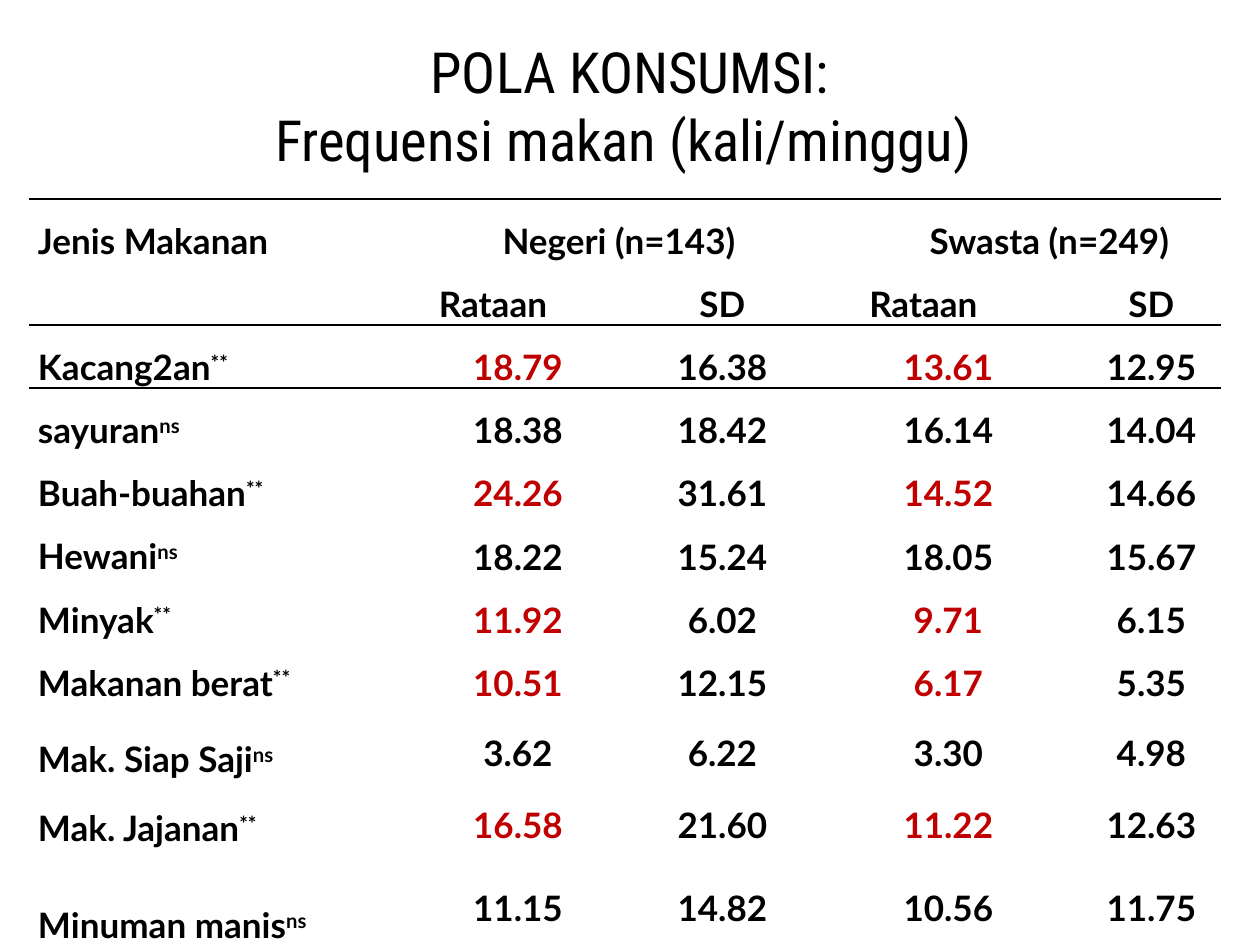
import pptx
import pptx.dml.color
import pptx.enum.text
import pptx.oxml
import pptx.oxml.ns
import pptx.util

PX = 914400 // 126
BLACK, RED, WHITE = "000000", "C00000", "FFFFFF"
ALIGN = pptx.enum.text.PP_ALIGN
ANCHOR = pptx.enum.text.MSO_ANCHOR
NO_STYLE = "{2D5ABB26-0587-4C30-8999-92F81FD0307C}"

COLUMN_WIDTHS = [354, 207, 202, 23, 204, 202]
ROW_HEIGHTS = [52] * 8 + [77, 69, 97]
SCHOOLS = [("Negeri (n=143)", 1), ("Swasta (n=249)", 4)]
VALUE_COLUMNS = [1, 2, 4, 5]

# Food, significance mark, then mean and SD for each school type
FOODS = [
    ("Kacang2an", "**", "18.79", "16.38", "13.61", "12.95"),
    ("sayuran", "ns", "18.38", "18.42", "16.14", "14.04"),
    ("Buah-buahan", "**", "24.26", "31.61", "14.52", "14.66"),
    ("Hewani", "ns", "18.22", "15.24", "18.05", "15.67"),
    ("Minyak", "**", "11.92", "6.02", "9.71", "6.15"),
    ("Makanan berat", "**", "10.51", "12.15", "6.17", "5.35"),
    ("Mak. Siap Saji", "ns", "3.62", "6.22", "3.30", "4.98"),
    ("Mak. Jajanan", "**", "16.58", "21.60", "11.22", "12.63"),
    ("Minuman manis", "ns", "11.15", "14.82", "10.56", "11.75"),
]


def px(length):
    return pptx.util.Emu(length * PX)


def color(value):
    return pptx.dml.color.RGBColor.from_string(value)


def set_attributes(target, values):
    for name, value in values.items():
        setattr(target, name, value)


def add_run(paragraph, text, ink=BLACK, superscript=False):
    run = paragraph.add_run()
    run.text = text
    set_attributes(run.font, {"name": "Lato", "size": pptx.util.Pt(20), "bold": True})
    run.font.color.rgb = color(ink)
    if superscript:
        run._r.get_or_add_rPr().set("baseline", "30000")


def write_cell(cell, text, ink=BLACK, indent=63, mark=None):
    """Write a centred, indented entry, or a left label when indent is 0."""
    paragraph = cell.text_frame.paragraphs[0]
    paragraph.line_spacing = 1.5
    if indent:
        paragraph.alignment = ALIGN.CENTER
        properties = paragraph._p.get_or_add_pPr()
        properties.set("marL", "0")
        properties.set("indent", str(px(indent)))
    add_run(paragraph, text, ink)
    if mark:
        cell.vertical_anchor = ANCHOR.BOTTOM
        add_run(paragraph, mark, superscript=True)


def add_border(cell, side):
    line = pptx.oxml.parse_xml(
        f'<a:{side} {pptx.oxml.ns.nsdecls("a")} w="12700"><a:solidFill>'
        f'<a:srgbClr val="{BLACK}"/></a:solidFill></a:{side}>')
    cell._tc.get_or_add_tcPr().insert(0, line)


def add_title(slide):
    box = slide.shapes.add_textbox(px(0), px(29), px(1260), px(152))
    set_attributes(box.text_frame, {"word_wrap": True, "vertical_anchor": ANCHOR.MIDDLE})
    paragraph = box.text_frame.paragraphs[0]
    paragraph.text = "POLA KONSUMSI:\vFrequensi makan (kali/minggu) "
    paragraph.alignment = ALIGN.CENTER
    for run in paragraph.runs:
        set_attributes(run.font, {"name": "Roboto Condensed", "size": pptx.util.Pt(32.4)})
        run.font.color.rgb = color(BLACK)


def add_empty_table(slide):
    frame = slide.shapes.add_table(
        len(ROW_HEIGHTS), len(COLUMN_WIDTHS), px(29), px(199),
        px(sum(COLUMN_WIDTHS)), px(sum(ROW_HEIGHTS)))
    table = frame.table
    set_attributes(table, {"first_row": False, "horz_banding": False})
    table._tbl.tblPr.find(pptx.oxml.ns.qn("a:tableStyleId")).text = NO_STYLE
    for column, width in zip(table.columns, COLUMN_WIDTHS):
        column.width = px(width)
    for row, height in zip(table.rows, ROW_HEIGHTS):
        row.height = px(height)

    # Plain white cells, ruled above and below the header and at the foot
    rules = {0: "lnT", 1: "lnB", 2: "lnT", len(ROW_HEIGHTS) - 1: "lnB"}
    for row_index, row in enumerate(table.rows):
        for cell in row.cells:
            set_attributes(cell, {
                "margin_left": px(9), "margin_right": px(9), "margin_top": 0,
                "margin_bottom": 0, "vertical_anchor": ANCHOR.MIDDLE})
            cell.fill.solid()
            cell.fill.fore_color.rgb = color(WHITE)
            if row_index in rules:
                add_border(cell, rules[row_index])
    return table


def fill_header(table):
    write_cell(table.cell(0, 0), "Jenis Makanan", indent=0)
    for school, column in SCHOOLS:
        table.cell(0, column).merge(table.cell(0, column + 1))
        write_cell(table.cell(0, column), school)
        write_cell(table.cell(1, column), "Rataan", indent=13)
        write_cell(table.cell(1, column + 1), "SD")


def fill_foods(table):
    mean_columns = [column for _, column in SCHOOLS]
    for row, (food, mark, *values) in enumerate(FOODS, start=2):
        write_cell(table.cell(row, 0), food, indent=0, mark=mark)
        for column, value in zip(VALUE_COLUMNS, values):
            # Means that differ significantly are red
            significant = mark == "**" and column in mean_columns
            write_cell(table.cell(row, column), value, RED if significant else BLACK)


def main():
    presentation = pptx.Presentation()
    set_attributes(presentation, {"slide_width": pptx.util.Inches(10),
                                  "slide_height": pptx.util.Inches(7.5)})
    slide = presentation.slides.add_slide(presentation.slide_layouts[6])
    add_title(slide)
    table = add_empty_table(slide)
    fill_header(table)
    fill_foods(table)
    presentation.save("out.pptx")


if __name__ == "__main__":
    main()
